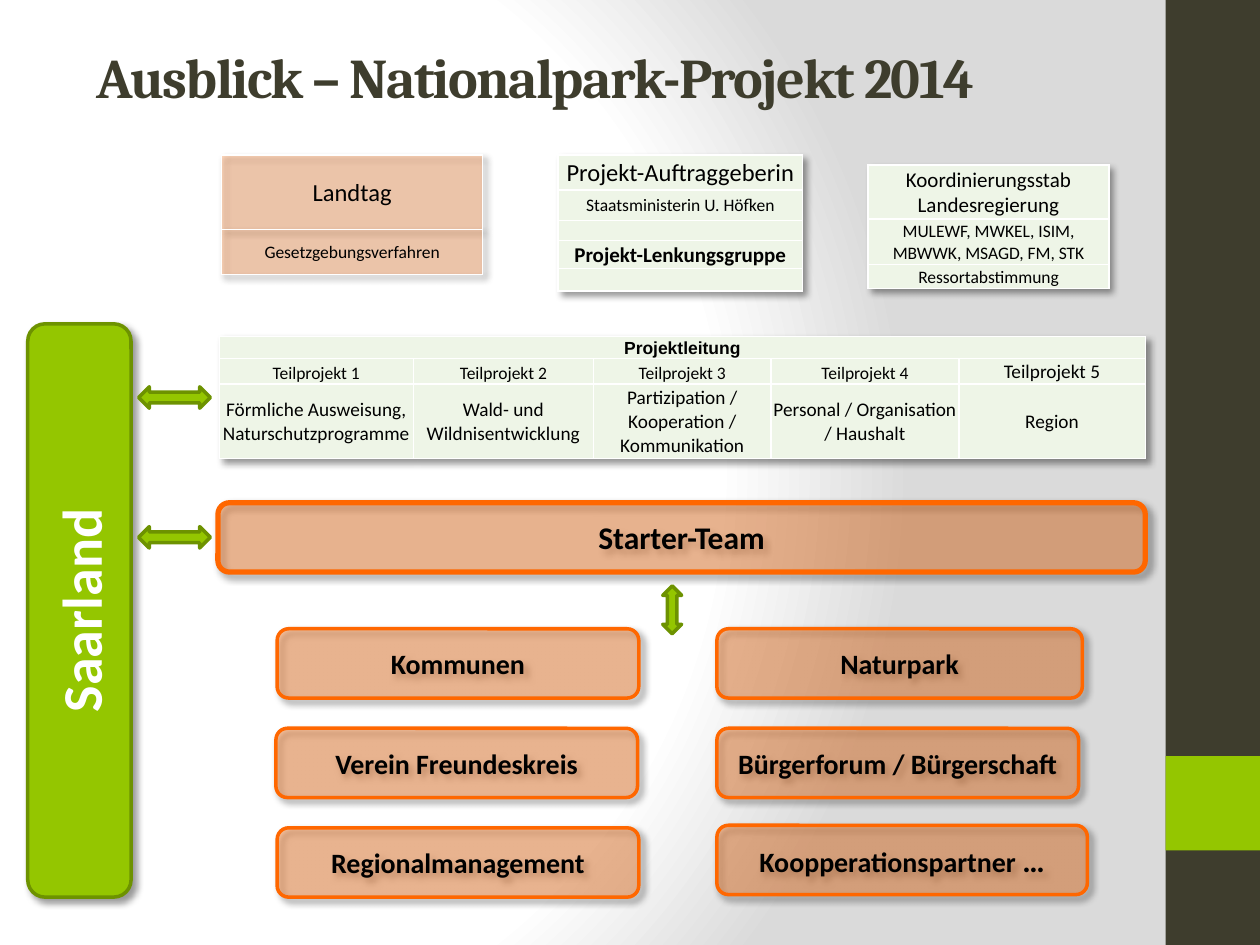
from dataclasses import dataclass

from lxml import etree
from pptx import Presentation
from pptx import util as u
from pptx.dml.color import RGBColor
from pptx.enum import shapes, text
from pptx.oxml import ns, parse_xml


@dataclass(frozen=True)
class Theme:
    dark: str = "3E3D2D"
    green: str = "94C600"
    green_edge: str = "6D9200"
    orange: str = "FF6700"
    pale: str = "EEF5E7"
    white: str = "FFFFFF"
    grey: str = "DADADA"
    black: str = "000000"
    serif: str = "Cambria"
    sans: str = "Calibri"
    plain: str = "Arial"
    headline: int = 32
    team: int = 18
    partner: int = 16
    heading: int = 14
    subheading: int = 12
    body: int = 11
    small: int = 10
    spacer: int = 8


T = Theme()
COLS, ROWS = 100, 75
SLIDE_W, SLIDE_H = u.Inches(10), u.Inches(7.5)
SHADOW = (f'<a:outerShdw {ns.nsdecls("a")} blurRad="50800" dist="38100" dir="2700000" '
          'algn="tl" rotWithShape="0"><a:srgbClr val="000000"><a:alpha val="40000"/>'
          '</a:srgbClr></a:outerShdw>')


def grid(col, row, cols, rows):
    """Turn grid columns and rows into slide lengths."""
    return (int(SLIDE_W * col / COLS), int(SLIDE_H * row / ROWS),
            int(SLIDE_W * cols / COLS), int(SLIDE_H * rows / ROWS))


def paint(fill, color, opacity=100):
    fill.solid()
    fill.fore_color.rgb = RGBColor.from_string(color)
    if opacity < 100:
        tone = fill._xPr.find(ns.qn("a:solidFill"))[0]
        etree.SubElement(tone, ns.qn("a:alpha"), val=str(opacity * 1000))


def add_run(paragraph, words, size, color=T.black, font=T.sans, bold=False):
    run = paragraph.add_run()
    run.text = words
    run.font.size, run.font.name, run.font.bold = u.Pt(size), font, bold
    run.font.color.rgb = RGBColor.from_string(color)
    return run


def add_background(slide):
    stops = "".join(f'<a:gs pos="{share * 1000}"><a:srgbClr val="{color}"/></a:gs>'
                    for share, color in ((0, T.white), (75, T.white), (100, T.grey)))
    slide._element.cSld.insert(0, parse_xml(
        f'<p:bg {ns.nsdecls("p", "a")}><p:bgPr><a:gradFill rotWithShape="1">'
        f'<a:gsLst>{stops}</a:gsLst><a:path path="circle">'
        '<a:fillToRect l="20000" t="50000" r="100000" b="50000"/></a:path>'
        '</a:gradFill><a:effectLst/></p:bgPr></p:bg>'))


def add_figure(slide, kind, place, color, edge=None, edge_width=2, opacity=100, shadow=False):
    figure = slide.shapes.add_shape(kind, *grid(*place))
    paint(figure.fill, color, opacity)
    if edge:
        figure.line.color.rgb = RGBColor.from_string(edge)
        figure.line.width = u.Pt(edge_width)
    else:
        figure.line.fill.background()
    figure.shadow.inherit = False
    if shadow:
        figure._element.spPr.find(ns.qn("a:effectLst")).append(parse_xml(SHADOW))
    return figure


def add_box(slide, place, runs, color=T.black, fill=T.orange, edge=T.orange,
            edge_width=2, opacity=35, upward=False):
    """Rounded box with a centred bold label made of (words, size) runs."""
    box = add_figure(slide, shapes.MSO_SHAPE.ROUNDED_RECTANGLE, place, fill, edge,
                     edge_width, opacity, shadow=True)
    frame = box.text_frame
    frame.word_wrap = True
    frame.vertical_anchor = text.MSO_ANCHOR.MIDDLE
    if upward:
        frame._txBody.bodyPr.set("vert", "vert270")
    label = frame.paragraphs[0]
    label.alignment = text.PP_ALIGN.CENTER
    for words, size in runs:
        add_run(label, words, size, color, bold=True)


def fill_cell(cell, content, fill, opacity, anchor):
    cell.margin_left = cell.margin_right = cell.margin_top = u.Inches(0.01)
    cell.margin_bottom = 0
    cell.vertical_anchor = anchor
    properties = cell._tc.get_or_add_tcPr()
    for side in "LRTB":
        properties.append(parse_xml(
            f'<a:ln{side} {ns.nsdecls("a")} w="12700"><a:solidFill>'
            f'<a:srgbClr val="{T.white}"/></a:solidFill></a:ln{side}>'))
    paint(cell.fill, fill, opacity)
    paragraph = cell.text_frame.paragraphs[0]
    paragraph.alignment = text.PP_ALIGN.CENTER
    if content:
        words, size, *style = content
        add_run(paragraph, words, size, T.black, *style)
    else:
        paragraph._p.get_or_add_endParaRPr().set("sz", str(T.spacer * 100))


def add_panel(slide, corner, widths, heights, rows, fill=T.pale, opacity=100, low_rows=()):
    """Table of (words, size, font, bold) cells; a row of one cell spans all columns."""
    place = grid(*corner, sum(widths), sum(heights))
    table = slide.shapes.add_table(len(rows), len(widths), *place).table
    table.first_row = table.horz_banding = False
    effects = etree.Element(ns.qn("a:effectLst"))
    effects.append(parse_xml(SHADOW))
    table._tbl.tblPr.insert(0, effects)
    for column, width in zip(table.columns, widths):
        column.width = grid(0, 0, width, 0)[2]
    for r, (height, contents) in enumerate(zip(heights, rows)):
        table.rows[r].height = grid(0, 0, 0, height)[3]
        if len(contents) < len(widths):
            table.cell(r, 0).merge(table.cell(r, len(widths) - 1))
        anchor = text.MSO_ANCHOR.BOTTOM if r in low_rows else text.MSO_ANCHOR.MIDDLE
        for c, content in enumerate(contents):
            fill_cell(table.cell(r, c), content, fill, opacity, anchor)


def add_title(slide):
    frame = slide.shapes.add_textbox(*grid(6.7, 1.3, 85, 7.9)).text_frame
    frame.word_wrap = True
    frame.vertical_anchor = text.MSO_ANCHOR.BOTTOM
    title = add_run(frame.paragraphs[0], "Ausblick – Nationalpark-Projekt 2014",
                    T.headline, T.dark, T.serif, True)
    title._r.get_or_add_rPr().set("spc", "-100")


def main():
    deck = Presentation()
    deck.slide_width, deck.slide_height = SLIDE_W, SLIDE_H
    slide = deck.slides.add_slide(deck.slide_layouts[6])

    # Backdrop, side band and title
    add_background(slide)
    for top, height, color in ((0, ROWS, T.dark), (60, 7.5, T.green)):
        add_figure(slide, shapes.MSO_SHAPE.RECTANGLE, (92.5, top, 7.5, height), color)
    add_title(slide)

    # Project management with its five subprojects
    tasks = ("Förmliche Ausweisung, Naturschutzprogramme", "Wald- und Wildnisentwicklung",
             "Partizipation / Kooperation / Kommunikation", "Personal / Organisation / Haushalt",
             "Region")
    subprojects = [(f"Teilprojekt {n}", T.body if n == len(tasks) else T.small)
                   for n in range(1, len(tasks) + 1)]
    add_panel(slide, (17.4, 26.7), (15.4, 14.3, 14.1, 14.9, 14.8), (1.7, 2, 5.9),
              [[("Projektleitung", T.small, T.plain, True)], subprojects,
               [(task, T.body) for task in tasks]], low_rows=(0, 1))

    # Steering bodies
    add_panel(slide, (68.9, 13.1), (19.1,), (4.3, 3.6, 1.9),
              [[("Koordinierungsstab Landesregierung", T.subheading)],
               [("MULEWF, MWKEL, ISIM, MBWWK, MSAGD, FM, STK", T.small)],
               [("Ressortabstimmung", T.small)]], low_rows=(2,))
    add_panel(slide, (44.3, 12.3), (19.4,), (2.8, 2.4, 1.6, 2.2, 1.8),
              [[("Projekt-Auftraggeberin", T.heading)],
               [("Staatsministerin U. Höfken", T.small)], [None],
               [("Projekt-Lenkungsgruppe", T.subheading, T.sans, True)], [None]])
    add_panel(slide, (17.6, 12.3), (20.7,), (5.9, 3.6),
              [[("Landtag", T.heading)], [("Gesetzgebungsverfahren", T.small)]],
              fill=T.orange, opacity=26)

    # Starter team and its partners
    add_box(slide, (17.3, 39.9, 73.6, 5.5), [("Starter-Team", T.team)], edge_width=3)
    partners = (
        (22, 49.9, 28.7, "Kommunen"), (56.9, 49.9, 29, "Naturpark"),
        (21.9, 57.8, 28.7, "Verein Freundeskreis"),
        (56.9, 57.8, 28.7, "Bürgerforum / Bürgerschaft"),
        (22, 65.7, 28.7, "Regionalmanagement"))
    for left, top, width, name in partners:
        add_box(slide, (left, top, width, 5.5), [(name, T.partner)])
    add_box(slide, (56.9, 65.5, 29.4, 5.5),
            [("Koopperationspartner ", T.partner), ("…", T.team)])

    # Neighbouring state and exchange arrows
    add_box(slide, (2.2, 25.7, 8.2, 45.5), [("Saarland", T.headline)], T.white,
            T.green, T.green_edge, opacity=100, upward=True)
    sideways = shapes.MSO_SHAPE.LEFT_RIGHT_ARROW
    for kind, place in ((shapes.MSO_SHAPE.UP_DOWN_ARROW, (52.6, 46.5, 1.5, 3.8)),
                        (sideways, (11, 41.8, 5.7, 1.7)), (sideways, (11, 30.7, 5.7, 1.7))):
        add_figure(slide, kind, place, T.green, T.green_edge)

    deck.save("out.pptx")


if __name__ == "__main__":
    main()
